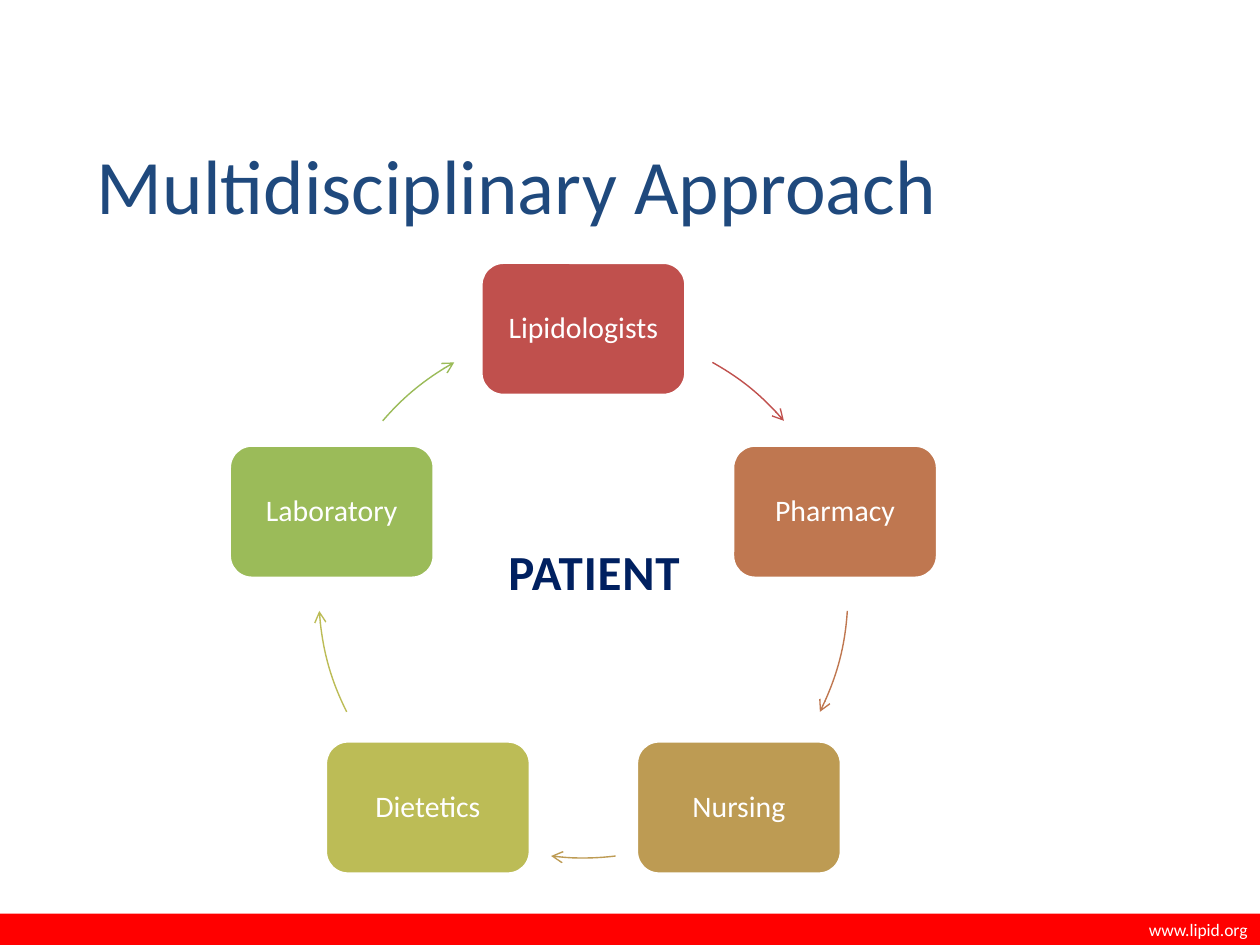
import math

from lxml import etree
from pptx import Presentation
from pptx.dml.color import RGBColor
from pptx.enum import shapes, text
from pptx.oxml.ns import qn
from pptx.util import Inches, Pt

WHITE = RGBColor(0xFF, 0xFF, 0xFF)
TITLE_BLUE = RGBColor(0x1F, 0x49, 0x7D)
NAVY = RGBColor(0x00, 0x20, 0x60)
RED = RGBColor(0xFF, 0x00, 0x00)
BRICK = RGBColor(0xC0, 0x50, 0x4D)
COPPER = RGBColor(0xBF, 0x77, 0x50)
OCHRE = RGBColor(0xBD, 0x9B, 0x53)
OLIVE = RGBColor(0xBC, 0xBC, 0x56)
GREEN = RGBColor(0x9B, 0xBB, 0x59)

CENTER_X, CENTER_Y, RADIUS = 4.63, 4.71, 2.1
BOX_WIDTH, BOX_HEIGHT = 1.62, 1.05

# Name, colour, and the arc's start and end in degrees past the box's centre
DISCIPLINES = [
    ("Lipidologists", BRICK, 29.2, 49.3),
    ("Pharmacy", COPPER, 21.8, 44.6),
    ("Nursing", OCHRE, 29, 43),
    ("Dietetics", OLIVE, 27.4, 50.2),
    ("Laboratory", GREEN, 22.7, 42.8),
]


def write_text(shape, words, size, color, align, anchor=text.MSO_ANCHOR.MIDDLE, bold=False):
    frame = shape.text_frame
    frame.word_wrap = True
    frame.vertical_anchor = anchor
    paragraph = frame.paragraphs[0]
    paragraph.alignment = align
    run = paragraph.add_run()
    run.text = words
    formats = {"name": "Calibri", "size": Pt(size), "bold": bold}
    for name, value in formats.items():
        setattr(run.font, name, value)
    run.font.color.rgb = color
    return run


def add_text(slide, place, *args, **formats):
    box = slide.shapes.add_textbox(*map(Inches, place))
    return write_text(box, *args, **formats)


def add_filled(slide, kind, place, fill):
    shape = slide.shapes.add_shape(kind, *map(Inches, place))
    shape.shadow.inherit = False
    shape.fill.solid()
    shape.fill.fore_color.rgb = fill
    return shape


def add_discipline(slide, name, color, angle):
    """Place a rounded box centred on the circle at the given angle."""
    x = CENTER_X + RADIUS * math.cos(math.radians(angle))
    y = CENTER_Y + RADIUS * math.sin(math.radians(angle))
    place = (x - BOX_WIDTH / 2, y - BOX_HEIGHT / 2, BOX_WIDTH, BOX_HEIGHT)
    box = add_filled(slide, shapes.MSO_SHAPE.ROUNDED_RECTANGLE, place, color)
    box.line.color.rgb = WHITE
    box.line.width = Pt(1.5)
    for side in ("left", "top", "right", "bottom"):
        setattr(box.text_frame, f"margin_{side}", Inches(0.07))
    write_text(box, name, 17, WHITE, text.PP_ALIGN.CENTER)
    box.text_frame.paragraphs[0].line_spacing = 0.9


def add_arc_arrow(slide, color, start, end):
    """Draw a clockwise arc of the circle with an arrowhead at its end."""
    place = (CENTER_X - RADIUS, CENTER_Y - RADIUS, 2 * RADIUS, 2 * RADIUS)
    arc = slide.shapes.add_shape(shapes.MSO_SHAPE.ARC, *map(Inches, place))
    arc.shadow.inherit = False
    arc.fill.background()
    arc.line.color.rgb = color
    arc.line.width = Pt(0.79)
    for index, angle in enumerate((start, end)):
        # Angles are stored in 1/60000 degree, adjustments in 1/100000
        arc.adjustments[index] = angle % 360 * 0.6
    line = arc.line._get_or_add_ln()
    etree.SubElement(line, qn("a:tailEnd"), type="arrow")


def add_footer(slide):
    bar = add_filled(slide, shapes.MSO_SHAPE.RECTANGLE, (0, 7.25, 10, 0.25), RED)
    bar.line.fill.background()
    write_text(bar, "www.lipid.org", 10, WHITE, text.PP_ALIGN.RIGHT)


def main():
    presentation = Presentation()
    presentation.slide_width = Inches(10)
    presentation.slide_height = Inches(7.5)
    slide = presentation.slides.add_slide(presentation.slide_layouts[6])

    add_text(slide, (0.67, 0.92, 8.92, 1.08), "Multidisciplinary Approach",
             44, TITLE_BLUE, text.PP_ALIGN.LEFT)
    for index, (name, color, start, end) in enumerate(DISCIPLINES):
        angle = -90 + index * 360 / len(DISCIPLINES)
        add_discipline(slide, name, color, angle)
        add_arc_arrow(slide, color, angle + start, angle + end)
    patient = add_text(slide, (3.42, 4.25, 2.59, 0.57), "PATIENT", 28, NAVY,
                       text.PP_ALIGN.CENTER, anchor=text.MSO_ANCHOR.TOP, bold=True)
    patient.font._element.set("spc", "50")
    add_footer(slide)
    presentation.save("out.pptx")


if __name__ == "__main__":
    main()
